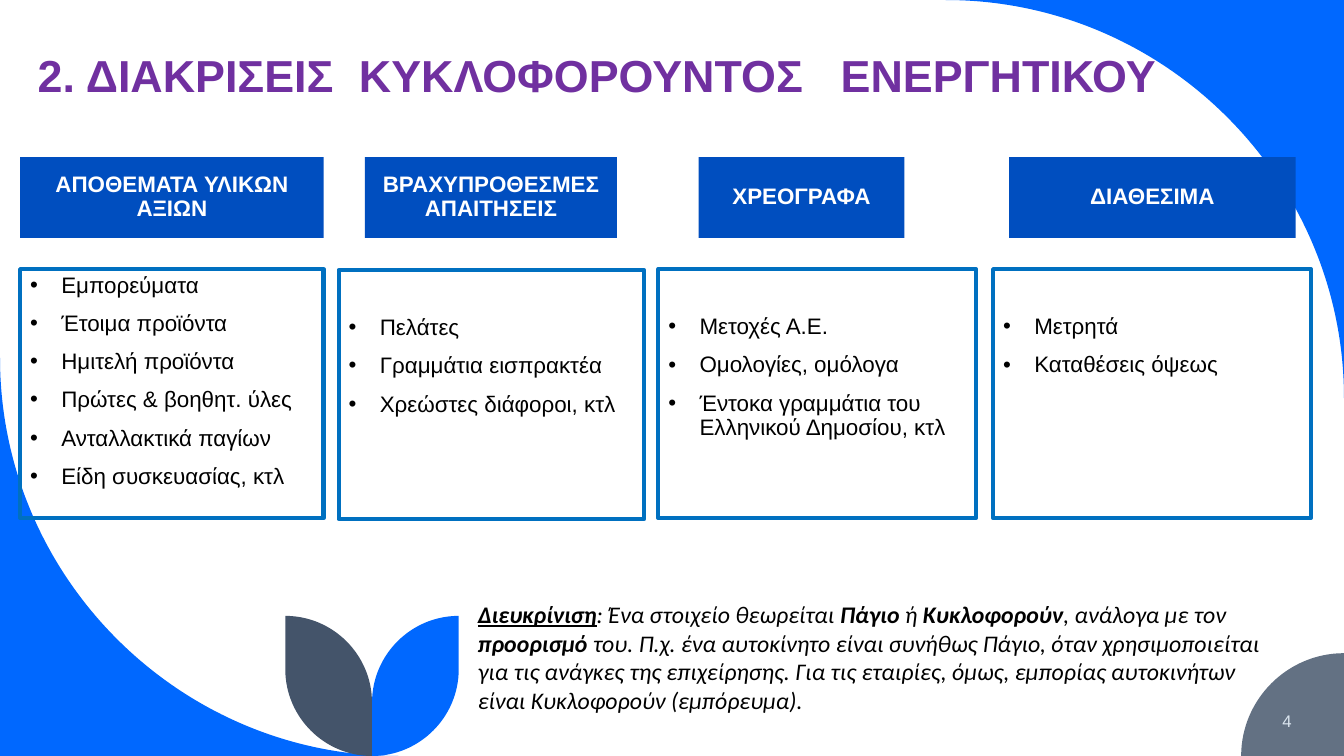
from lxml import etree
from pptx import Presentation
from pptx.dml.color import RGBColor
from pptx.enum.shapes import MSO_SHAPE
from pptx.enum.text import MSO_ANCHOR, MSO_AUTO_SIZE, PP_ALIGN
from pptx.oxml.ns import qn
from pptx.util import Inches, Pt

RECTANGLE = MSO_SHAPE.RECTANGLE
TOP, MIDDLE = MSO_ANCHOR.TOP, MSO_ANCHOR.MIDDLE
LEFT, CENTER, RIGHT = PP_ALIGN.LEFT, PP_ALIGN.CENTER, PP_ALIGN.RIGHT
NO_AUTOFIT = MSO_AUTO_SIZE.NONE

COLORS = {
    "blue": "0068FF", "header": "004EBF", "border": "0070C0",
    "slate": "44546A", "gray": "637183", "title": "7030A0",
    "number": "DAE5EF", "white": "FFFFFF", "black": "000000",
}
WIDTH, HEIGHT = 13.33, 7.5
HEADER_TOP, HEADER_HEIGHT = 1.56, 0.8
LIST_HEIGHT = 2.47
BULLET_INDENT = 0.31
ARC_PULL = 0.55  # share of the way to the corner that rounds a quarter arc

# header, its left and width, list left, top and width, list inset, items
CATEGORIES = [
    ("ΑΠΟΘΕΜΑΤΑ ΥΛΙΚΩΝ ΑΞΙΩΝ", 0.2, 3.01, 0.2, 2.67, 3.01, 0.05,
     ["Εμπορεύματα", "Έτοιμα προϊόντα", "Ημιτελή προϊόντα",
      "Πρώτες & βοηθητ. ύλες", "Ανταλλακτικά παγίων",
      "Είδη συσκευασίας, κτλ"]),
    ("ΒΡΑΧΥΠΡΟΘΕΣΜΕΣ ΑΠΑΙΤΗΣΕΙΣ", 3.62, 2.5, 3.36, 2.68, 3.03, 0.46,
     ["Πελάτες", "Γραμμάτια εισπρακτέα", "Χρεώστες διάφοροι, κτλ"]),
    ("ΧΡΕΟΓΡΑΦΑ", 6.93, 2.04, 6.53, 2.67, 3.15, 0.46,
     ["Μετοχές Α.Ε.", "Ομολογίες, ομόλογα",
      "Έντοκα γραμμάτια του Ελληνικού Δημοσίου, κτλ"]),
    ("ΔΙΑΘΕΣΙΜΑ", 10.01, 2.84, 9.85, 2.67, 3.15, 0.46,
     ["Μετρητά", "Καταθέσεις όψεως"]),
]
# text, word gap after it in extra points
TITLE = [("2. ΔΙΑΚΡΙΣΕΙΣ", 8.9), ("ΚΥΚΛΟΦΟΡΟΥΝΤΟΣ", 17.8), ("ΕΝΕΡΓΗΤΙΚΟΥ", 0)]
CLARIFICATION = [
    ("Διευκρίνιση", {"bold": True, "underline": True}),
    (": Ένα στοιχείο θεωρείται ", {}),
    ("Πάγιο", {"bold": True}),
    (" ή ", {}),
    ("Κυκλοφορούν", {"bold": True}),
    (", ανάλογα με τον ", {}),
    ("προορισμό", {"bold": True}),
    (" του. Π.χ. ένα αυτοκίνητο είναι συνήθως Πάγιο, όταν χρησιμοποιείται "
     "για τις ανάγκες της επιχείρησης. Για τις εταιρίες, όμως, εμπορίας "
     "αυτοκινήτων είναι Κυκλοφορούν (εμπόρευμα).", {}),
]


def rgb(color):
    return RGBColor.from_string(COLORS[color])


def add_run(paragraph, text, size, color, name="Arial", **formats):
    run = paragraph.add_run()
    run.text = text
    run.font.color.rgb = rgb(color)
    for key, value in {"size": Pt(size), "name": name, **formats}.items():
        setattr(run.font, key, value)
    return run


def pull(point, corner):
    return tuple(p + ARC_PULL * (c - p) for p, c in zip(point, corner))


def add_curved_shape(slide, color, *arcs):
    """Join quarter arcs, each given as start, tangent corner and end."""
    outline = []
    for start, corner, end in arcs:
        outline += [start, pull(start, corner), pull(end, corner), end]
    if len(arcs) == 1:
        start, corner, end = arcs[0]
        outline.append((start[0] + end[0] - corner[0], start[1] + end[1] - corner[1])
                       if color == "gray" else corner)
    outline = [(Inches(x), Inches(y)) for x, y in outline]
    builder = slide.shapes.build_freeform(*outline[0])
    builder.add_line_segments(outline[1:], close=True)
    shape = builder.convert_to_shape()
    shape.shadow.inherit = False
    shape.fill.solid()
    shape.fill.fore_color.rgb = rgb(color)
    shape.line.fill.background()

    steps = list(shape._element.find(".//" + qn("a:path")))
    for index in range(len(arcs)):
        first, *others = steps[4 * index + 1:4 * index + 4]
        curve = etree.Element(qn("a:cubicBezTo"))
        first.addprevious(curve)
        for step in (first, *others):
            curve.append(step[0])
            step.getparent().remove(step)


def add_decoration(slide):
    big, small = 3.95, 1.02
    add_curved_shape(slide, "blue", ((WIDTH - big, 0), (WIDTH, 0), (WIDTH, big)))
    add_curved_shape(slide, "blue",
                     ((0, HEIGHT - big), (0, HEIGHT), (big, HEIGHT)))
    add_curved_shape(slide, "gray",
                     ((WIDTH - small, HEIGHT), (WIDTH - small, HEIGHT - small),
                      (WIDTH, HEIGHT - small)))
    stem, leaf_top, leaf_width = 3.69, 6.11, 0.86
    for color, reach in (("blue", leaf_width), ("slate", -leaf_width)):
        tip = stem + reach
        add_curved_shape(
            slide, color,
            ((tip, HEIGHT - leaf_width), (tip, HEIGHT), (stem, HEIGHT)),
            ((stem, leaf_top + leaf_width), (stem, leaf_top), (tip, leaf_top)))


def add_panel(slide, left, top, width, height, anchor):
    panel = slide.shapes.add_shape(
        RECTANGLE, Inches(left), Inches(top), Inches(width), Inches(height))
    panel.shadow.inherit = False
    panel.text_frame.word_wrap = True
    panel.text_frame.vertical_anchor = anchor
    return panel


def add_header(slide, text, left, width):
    header = add_panel(slide, left, HEADER_TOP, width, HEADER_HEIGHT, MIDDLE)
    header.fill.solid()
    header.fill.fore_color.rgb = rgb("header")
    header.line.fill.background()
    paragraph = header.text_frame.paragraphs[0]
    paragraph.alignment = CENTER
    paragraph.line_spacing = 0.9
    add_run(paragraph, text, 16, "white", bold=True)


def add_bullet(paragraph):
    properties = paragraph._p.get_or_add_pPr()
    properties.set("marL", str(Inches(BULLET_INDENT)))
    properties.set("indent", str(-Inches(BULLET_INDENT)))
    etree.SubElement(properties, qn("a:buFont")).set("typeface", "Arial")
    etree.SubElement(properties, qn("a:buChar")).set("char", "•")


def add_list(slide, items, left, top, width, inset):
    panel = add_panel(slide, left, top, width, LIST_HEIGHT, TOP)
    panel.fill.background()
    panel.line.color.rgb = rgb("border")
    panel.line.width = Pt(3)
    frame = panel.text_frame
    frame.margin_top = Inches(inset)
    for index, item in enumerate(items):
        paragraph = frame.add_paragraph() if index else frame.paragraphs[0]
        add_bullet(paragraph)
        paragraph.alignment = LEFT
        paragraph.line_spacing = 0.9
        paragraph.space_before = Pt(10 if index else 0)
        add_run(paragraph, item, 16, "black")


def set_title(slide):
    title = slide.shapes.title
    title.left, title.top = Inches(0.01), Inches(0.42)
    title.width, title.height = Inches(11.82), Inches(0.64)
    frame = title.text_frame
    frame.auto_size = NO_AUTOFIT
    frame.vertical_anchor = TOP
    paragraph = frame.paragraphs[0]
    paragraph.alignment = CENTER
    for words, gap in TITLE:
        add_run(paragraph, words, 32, "title", bold=True)
        if gap:
            space = add_run(paragraph, " ", 32, "title", bold=True)
            space._r.get_or_add_rPr().set("spc", str(round(gap * 100)))


def add_text(slide, left, top, width, height, anchor, alignment):
    """Add an empty text box and return its first paragraph."""
    box = slide.shapes.add_textbox(
        Inches(left), Inches(top), Inches(width), Inches(height))
    box.text_frame.word_wrap = True
    box.text_frame.vertical_anchor = anchor
    paragraph = box.text_frame.paragraphs[0]
    paragraph.alignment = alignment
    return paragraph


def main():
    presentation = Presentation()
    presentation.slide_width, presentation.slide_height = Inches(WIDTH), Inches(HEIGHT)
    slide = presentation.slides.add_slide(presentation.slide_layouts[5])
    add_decoration(slide)
    set_title(slide)
    for name, left, width, list_left, list_top, list_width, inset, items in CATEGORIES:
        add_header(slide, name, left, width)
        add_list(slide, items, list_left, list_top, list_width, inset)
    clarification = add_text(slide, 4.64, 5.9, 7.98, 1.25, TOP, LEFT)
    for text, formats in CLARIFICATION:
        add_run(clarification, text, 17, "black", "Calibri", italic=True, **formats)
    add_run(add_text(slide, 11.1, 6.95, 1.81, 0.4, MIDDLE, RIGHT), "4", 12, "number")
    presentation.save("out.pptx")


if __name__ == "__main__":
    main()
